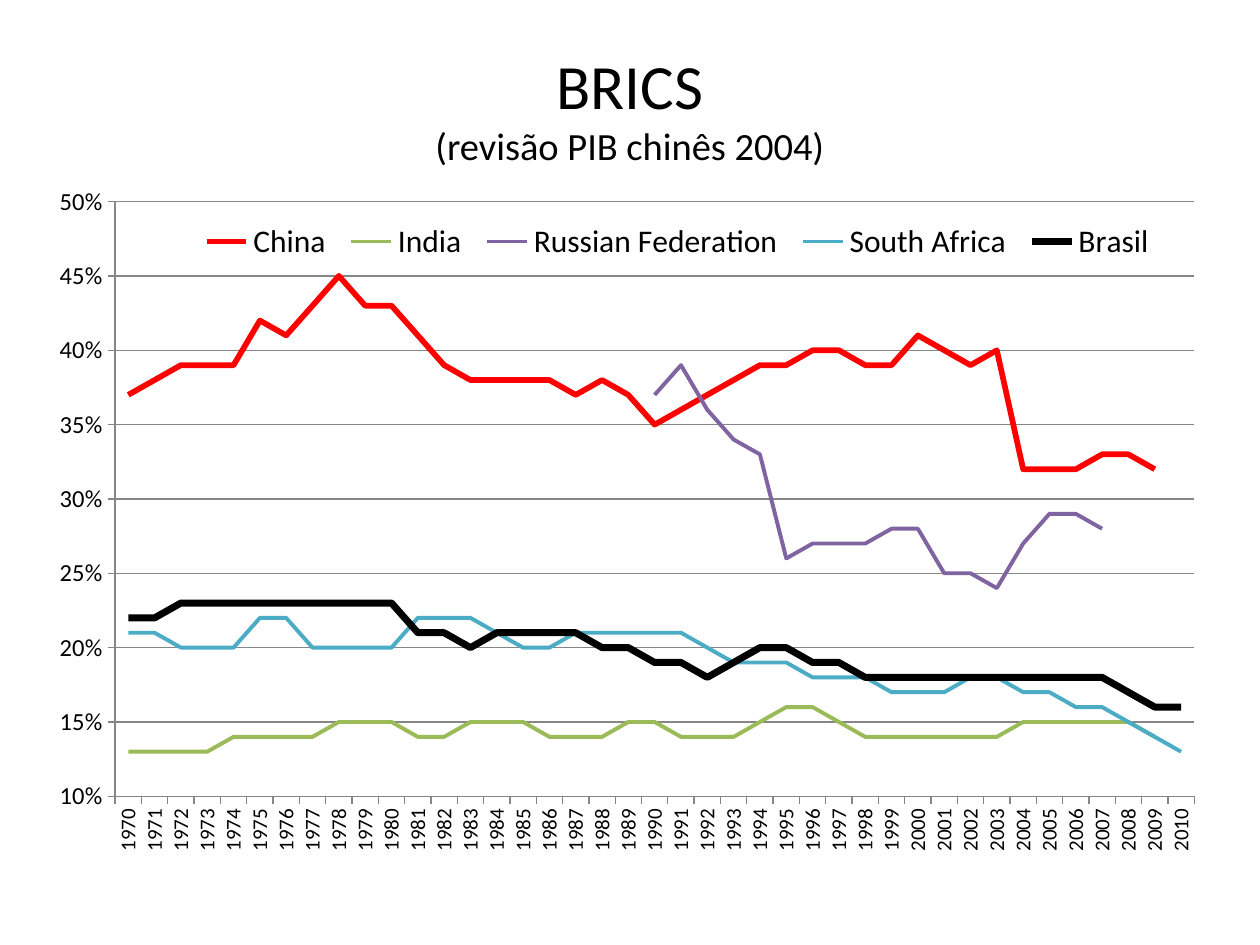
from dataclasses import dataclass

from lxml import etree
from pptx import Presentation
from pptx.chart.data import CategoryChartData
from pptx.dml.color import RGBColor
from pptx.enum.chart import XL_CHART_TYPE, XL_LEGEND_POSITION, XL_MARKER_STYLE, XL_TICK_MARK
from pptx.enum.text import MSO_ANCHOR, PP_ALIGN
from pptx.oxml.ns import qn
from pptx.util import Inches, Pt

LINE = XL_CHART_TYPE.LINE
RIGHT = XL_LEGEND_POSITION.RIGHT
NO_MARKER = XL_MARKER_STYLE.NONE
OUTSIDE = XL_TICK_MARK.OUTSIDE
MIDDLE = MSO_ANCHOR.MIDDLE
CENTER = PP_ALIGN.CENTER

FONT = "Calibri"
COLORS = {
    "text": "000000",
    "grid": "868686",
    "china": "FF0000",
    "india": "9BBB59",
    "russia": "8064A2",
    "south_africa": "4BACC6",
    "brasil": "000000",
}
WIDTH, HEIGHT = Inches(10), Inches(7.5)
YEARS = range(1970, 2011)


@dataclass
class Box:
    x: float
    y: float
    w: float
    h: float

    def on_slide(self):
        return [Inches(v) for v in (self.x, self.y, self.w, self.h)]


@dataclass
class Country:
    name: str
    color: str
    percents: list[int]
    start: int = 1970
    width: float = 2.25

    def shares(self) -> list[float | None]:
        by_year = dict(enumerate(self.percents, self.start))
        return [by_year[y] / 100 if y in by_year else None for y in YEARS]


TITLE_BOX = Box(0.5, 0.3, 9, 1.11)
CHART_BOX = Box(0.31, 1.48, 9.3, 5.47)
PLOT = Box(0.065, 0.022, 0.921, 0.863)
LEGEND = Box(0.13, 0.04, 0.83, 0.08)

COUNTRIES = [
    Country("China", "china", [
        37, 38, 39, 39, 39, 42, 41, 43, 45, 43, 43, 41, 39, 38, 38, 38, 38, 37, 38, 37,
        35, 36, 37, 38, 39, 39, 40, 40, 39, 39, 41, 40, 39, 40, 32, 32, 32, 33, 33, 32,
    ], width=3.25),
    Country("India", "india", [
        13, 13, 13, 13, 14, 14, 14, 14, 15, 15, 15, 14, 14, 15, 15, 15, 14, 14, 14, 15,
        15, 14, 14, 14, 15, 16, 16, 15, 14, 14, 14, 14, 14, 14, 15, 15, 15, 15, 15, 14,
    ]),
    Country("Russian Federation", "russia", [
        37, 39, 36, 34, 33, 26, 27, 27, 27, 28, 28, 25, 25, 24, 27, 29, 29, 28,
    ], start=1990),
    Country("South Africa", "south_africa", [
        21, 21, 20, 20, 20, 22, 22, 20, 20, 20, 20, 22, 22, 22, 21, 20, 20, 21, 21, 21,
        21, 21, 20, 19, 19, 19, 18, 18, 18, 17, 17, 17, 18, 18, 17, 17, 16, 16, 15, 14, 13,
    ]),
    Country("Brasil", "brasil", [
        22, 22, 23, 23, 23, 23, 23, 23, 23, 23, 23, 21, 21, 20, 21, 21, 21, 21, 20, 20,
        19, 19, 18, 19, 20, 20, 19, 19, 18, 18, 18, 18, 18, 18, 18, 18, 18, 18, 17, 16, 16,
    ], width=4),
]


def rgb(name: str) -> RGBColor:
    return RGBColor.from_string(COLORS[name])


def style_line(line, color: str, width: float) -> None:
    line.color.rgb = rgb(color)
    line.width = Pt(width)


def set_layout(parent, index: int, box: Box, inner: bool = False) -> None:
    for old in parent.findall(qn("c:layout")):
        parent.remove(old)
    layout = etree.Element(qn("c:layout"))
    manual = etree.SubElement(layout, qn("c:manualLayout"))
    values = {"layoutTarget": "inner"} if inner else {}
    values |= {"xMode": "edge", "yMode": "edge"}
    values |= {k: str(getattr(box, k)) for k in "xywh"}
    for tag, val in values.items():
        etree.SubElement(manual, qn(f"c:{tag}")).set("val", val)
    parent.insert(index, layout)


def add_title(slide) -> None:
    tf = slide.shapes.add_textbox(*TITLE_BOX.on_slide()).text_frame
    tf.word_wrap = True
    tf.vertical_anchor = MIDDLE
    p = tf.paragraphs[0]
    p.alignment = CENTER
    p.font.name = FONT
    p.font.color.rgb = rgb("text")
    r = p.add_run()
    r.text = "BRICS"
    r.font.size = Pt(36)
    p.add_line_break()
    r = p.add_run()
    r.text = "(revisão PIB chinês 2004)"
    r.font.size = Pt(22)


def style_axis(axis, size: float) -> None:
    axis.major_tick_mark = OUTSIDE
    axis.tick_labels.font.size = Pt(size)
    style_line(axis.format.line, "grid", 0.75)


def add_line_chart(slide) -> None:
    data = CategoryChartData(number_format="0%")
    data.categories = [str(y) for y in YEARS]
    for country in COUNTRIES:
        data.add_series(country.name, country.shares())
    chart = slide.shapes.add_chart(LINE, *CHART_BOX.on_slide(), data).chart
    chart.has_title = False
    chart.font.name = FONT
    chart.font.size = Pt(10)
    chart.font.color.rgb = rgb("text")

    plot = chart.plots[0]
    plot.vary_by_categories = False
    for series, country in zip(plot.series, COUNTRIES):
        series.smooth = False
        series.marker.style = NO_MARKER
        style_line(series.format.line, country.color, country.width)

    years, shares = chart.category_axis, chart.value_axis
    style_axis(years, 12)
    years.tick_labels.font.bold = False
    years._element.find(qn("c:txPr")).find(qn("a:bodyPr")).set("rot", "-5400000")
    style_axis(shares, 14)
    shares.minimum_scale, shares.maximum_scale, shares.major_unit = 0.1, 0.5, 0.05
    shares.tick_labels.number_format = "0%"
    shares.tick_labels.number_format_is_linked = False
    shares.has_major_gridlines = True
    style_line(shares.major_gridlines.format.line, "grid", 0.75)

    chart.has_legend = True
    legend = chart.legend
    legend.position = RIGHT
    legend.include_in_layout = False
    legend.font.size = Pt(18)
    set_layout(legend._element, 1, LEGEND)
    set_layout(chart._chartSpace.chart.plotArea, 0, PLOT, inner=True)


def main() -> None:
    prs = Presentation()
    prs.slide_width, prs.slide_height = WIDTH, HEIGHT
    slide = prs.slides.add_slide(prs.slide_layouts[6])
    add_title(slide)
    add_line_chart(slide)
    prs.save("out.pptx")


if __name__ == "__main__":
    main()
